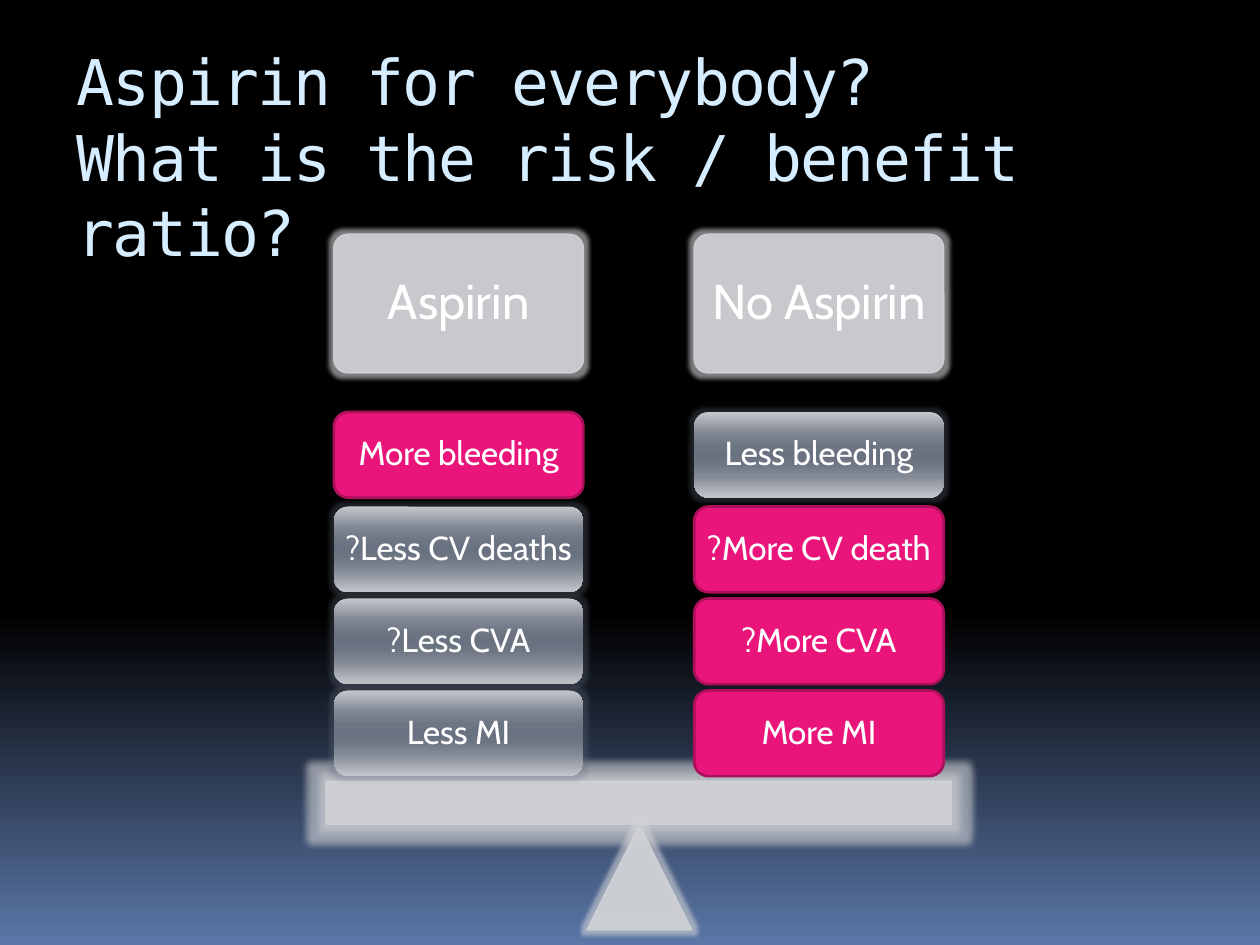
from lxml import etree
from pptx import Presentation
from pptx.dml.color import RGBColor
from pptx.enum.shapes import MSO_SHAPE
from pptx.enum.text import MSO_ANCHOR, PP_ALIGN
from pptx.oxml.ns import qn
from pptx.util import Inches, Pt

ROUNDED = MSO_SHAPE.ROUNDED_RECTANGLE
RECTANGLE = MSO_SHAPE.RECTANGLE
TRIANGLE = MSO_SHAPE.ISOSCELES_TRIANGLE
MIDDLE = MSO_ANCHOR.MIDDLE
CENTER = PP_ALIGN.CENTER

TITLE_FONT = "DejaVu Sans Mono"
BODY_FONT = "Cabin"
PALE_BLUE = RGBColor(0xD6, 0xEC, 0xFF)
WHITE = RGBColor(0xFF, 0xFF, 0xFF)
SILVER = RGBColor(0xD0, 0xD2, 0xD5)
PINK = RGBColor(0xEA, 0x15, 0x7A)
DARK_PINK = RGBColor(0xAD, 0x10, 0x5A)
SLATE = RGBColor(0x69, 0x72, 0x81)
BLACK = RGBColor(0x00, 0x00, 0x00)
NIGHT_BLUE = RGBColor(0x5B, 0x77, 0xA8)

BACKGROUND_STOPS = [(0, BLACK), (65, BLACK), (100, NIGHT_BLUE)]
STEEL_STOPS = [
    (0, RGBColor(0xC4, 0xC7, 0xCC)),
    (25, RGBColor(0x80, 0x86, 0x92)),
    (40, RGBColor(0x6D, 0x75, 0x83)),
    (50, SLATE),
    (60, RGBColor(0x6D, 0x75, 0x83)),
    (75, RGBColor(0x85, 0x8B, 0x96)),
    (100, RGBColor(0xC3, 0xC6, 0xCC)),
]

# Scale layout, in inches
COLUMN_WIDTH = 1.98
HEADER_TOP, HEADER_HEIGHT = 1.86, 1.1
TILE_TOPS = [3.27, 4.02, 4.75, 5.48]
TILE_HEIGHT = 0.68
COLUMNS = [
    (2.65, "Aspirin",
     ["More bleeding", "?Less CV deaths", "?Less CVA", "Less MI"]),
    (5.51, "No Aspirin",
     ["Less bleeding", "?More CV death", "?More CVA", "More MI"]),
]


class ScaleSlide:
    """Holds the style and the current slide."""

    def __init__(self, slide):
        self.slide = slide

    def gradient(self, fill, owner, stops):
        """Fill from top to bottom with (percent, colour) stops."""
        fill.gradient()
        fill.gradient_angle = 270
        stop_list = owner.find(".//" + qn("a:gsLst"))
        for stop in list(stop_list):
            stop_list.remove(stop)
        for percent, color in stops:
            stop = etree.SubElement(stop_list, qn("a:gs"), pos=str(percent * 1000))
            etree.SubElement(stop, qn("a:srgbClr"), val=str(color))

    def background(self, stops):
        self.gradient(self.slide.background.fill, self.slide._element, stops)

    def glow(self, shape, color, radius, opacity):
        effects = shape._element.spPr.find(qn("a:effectLst"))
        glow = etree.SubElement(effects, qn("a:glow"), rad=str(Pt(radius)))
        tint = etree.SubElement(glow, qn("a:srgbClr"), val=str(color))
        etree.SubElement(tint, qn("a:alpha"), val=str(opacity * 1000))

    def format_text(self, text_frame, font_name, size, color):
        for paragraph in text_frame.paragraphs:
            for run in paragraph.runs:
                run.font.name = font_name
                run.font.size = Pt(size)
                run.font.color.rgb = color

    def title(self, text, left, top, width, height):
        box = self.slide.shapes.add_textbox(
            Inches(left), Inches(top), Inches(width), Inches(height))
        box.text_frame.word_wrap = True
        box.text_frame.paragraphs[0].text = text
        self.format_text(box.text_frame, TITLE_FONT, 36, PALE_BLUE)
        for run in box.text_frame.paragraphs[0].runs:
            run.font._element.set("spc", "-100")

    def shape(self, kind, left, top, width, height):
        shape = self.slide.shapes.add_shape(
            kind, Inches(left), Inches(top), Inches(width), Inches(height))
        shape.shadow.inherit = False
        return shape

    def label(self, shape, text, size):
        text_frame = shape.text_frame
        text_frame.text = text
        text_frame.word_wrap = False
        text_frame.vertical_anchor = MIDDLE
        text_frame.margin_left = text_frame.margin_right = Inches(0.08)
        text_frame.margin_top = text_frame.margin_bottom = Inches(0.08)
        text_frame.paragraphs[0].alignment = CENTER
        text_frame.paragraphs[0].line_spacing = 0.9
        self.format_text(text_frame, BODY_FONT, size, WHITE)

    def silver_part(self, kind, left, top, width, height, glow_radius=5):
        """Translucent, glowing part of the scale."""
        part = self.shape(kind, left, top, width, height)
        part.fill.solid()
        part.fill.fore_color.rgb = SILVER
        part.line.color.rgb = SILVER
        part.line.width = Pt(0.94)
        for color in part._element.spPr.iter(qn("a:srgbClr")):
            etree.SubElement(color, qn("a:alpha"), val="90000")
        self.glow(part, SILVER, glow_radius, 60)
        return part

    def header(self, text, left):
        card = self.silver_part(
            ROUNDED, left, HEADER_TOP, COLUMN_WIDTH, HEADER_HEIGHT)
        card.adjustments[0] = 0.1
        self.label(card, text, 28)

    def tile(self, text, left, top):
        """Pink for a harm ("More"), steel for a benefit ("Less")."""
        tile = self.shape(ROUNDED, left, top, COLUMN_WIDTH, TILE_HEIGHT)
        if "More" in text:
            tile.fill.solid()
            tile.fill.fore_color.rgb = PINK
            tile.line.color.rgb = DARK_PINK
            tile.line.width = Pt(1.5)
        else:
            self.gradient(tile.fill, tile._element, STEEL_STOPS)
            tile.line.fill.background()
            self.glow(tile, SLATE, 5, 30)
        self.label(tile, text, 19)


def main():
    presentation = Presentation()
    presentation.slide_width = Inches(10)
    presentation.slide_height = Inches(7.5)
    page = ScaleSlide(presentation.slides.add_slide(presentation.slide_layouts[6]))

    # Background and title
    page.background(BACKGROUND_STOPS)
    page.title("Aspirin for everybody?\vWhat is the risk / benefit ratio?",
               0.51, 0.29, 9.21, 1.27)

    # Fulcrum and beam
    page.silver_part(TRIANGLE, 4.66, 6.55, 0.83, 0.83)
    page.silver_part(RECTANGLE, 2.59, 6.2, 4.96, 0.34, glow_radius=8)

    # Headers and the stacked outcomes on each side
    for left, heading, outcomes in COLUMNS:
        page.header(heading, left)
        for top, outcome in zip(TILE_TOPS, outcomes):
            page.tile(outcome, left, top)

    presentation.save("out.pptx")


if __name__ == "__main__":
    main()
